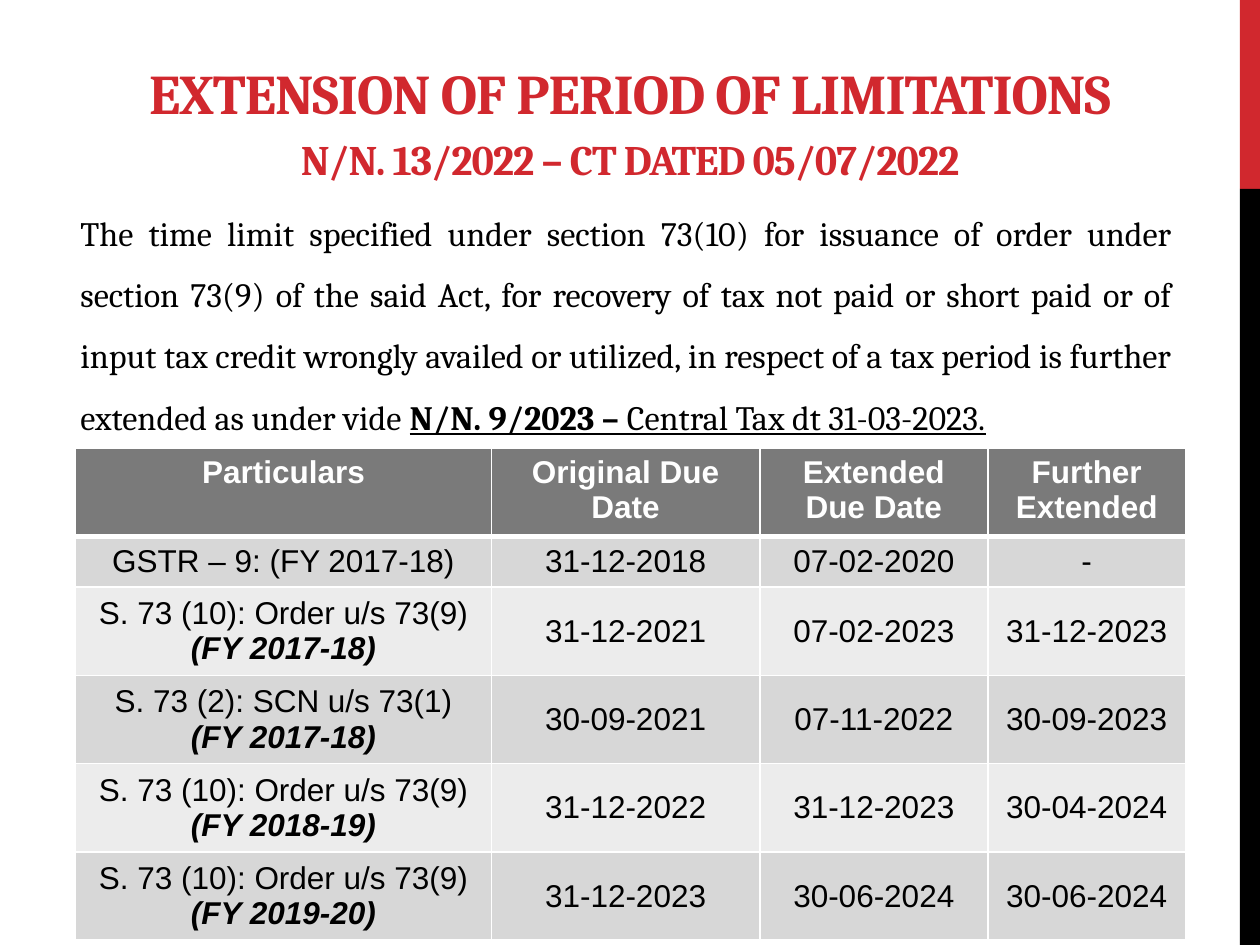
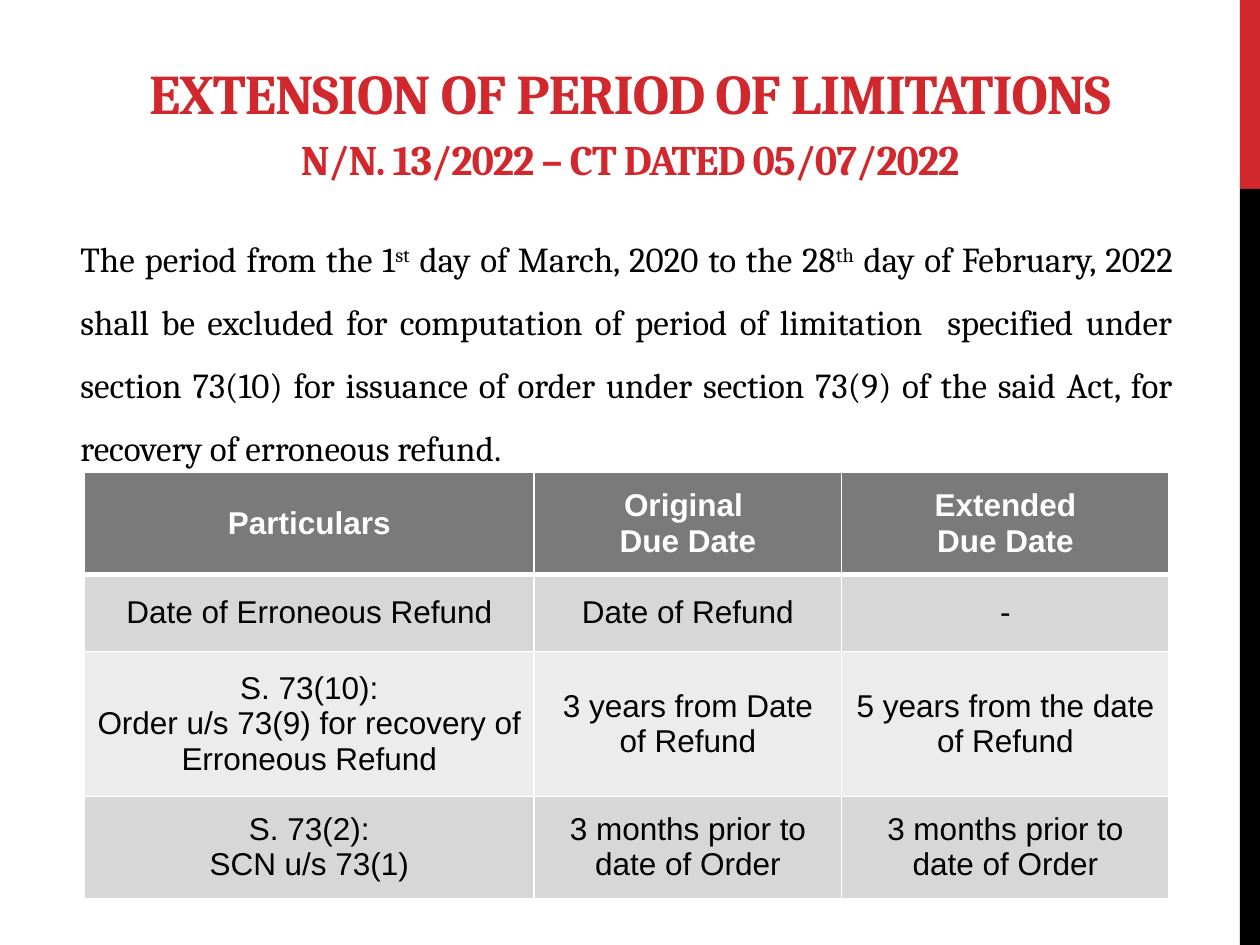
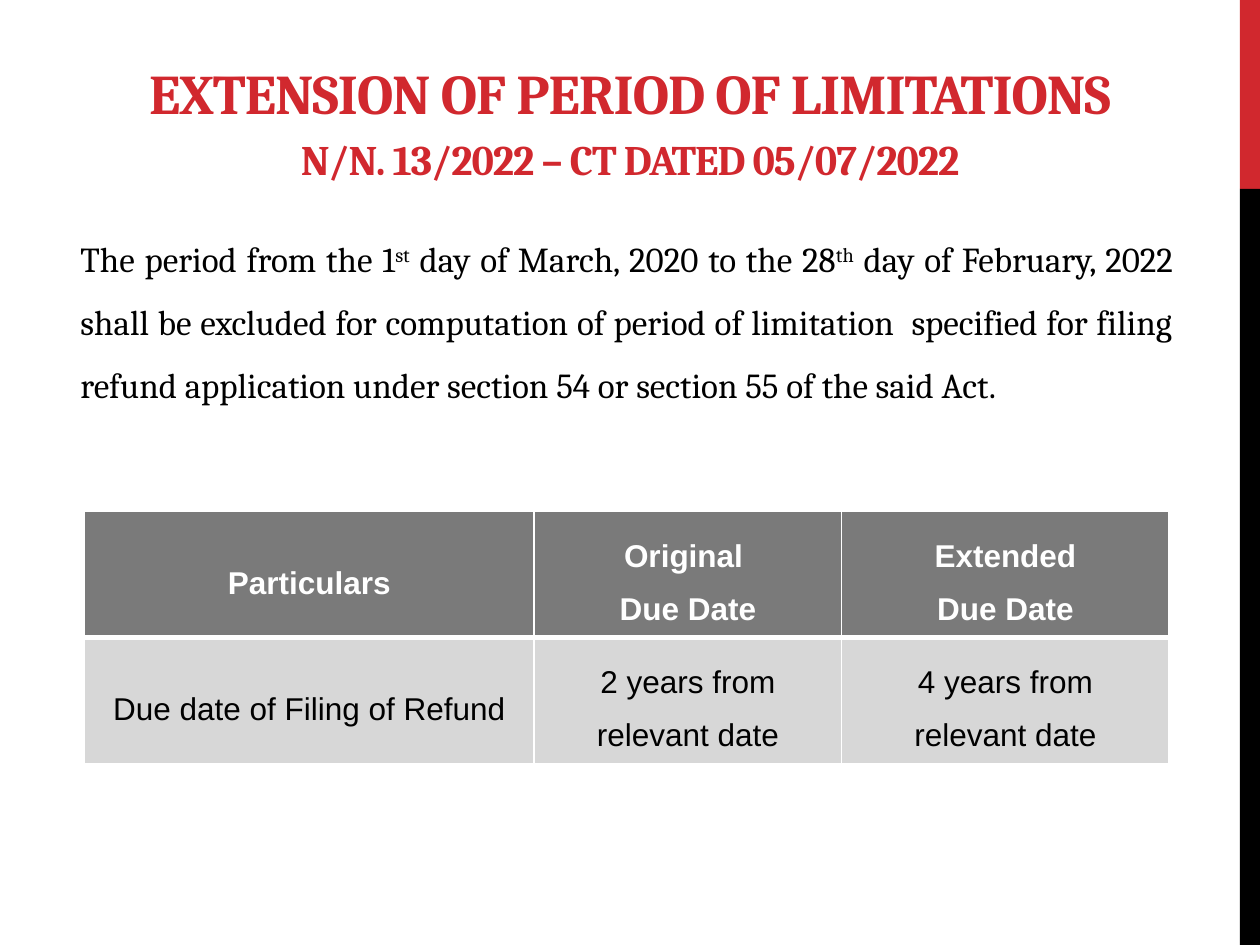
from lxml.etree import SubElement
from pptx import Presentation
from pptx.dml.color import RGBColor
from pptx.enum.shapes import MSO_SHAPE
from pptx.enum.text import MSO_ANCHOR, PP_ALIGN
from pptx.oxml import parse_xml
from pptx.oxml.ns import nsdecls, qn
from pptx.util import Inches, Pt

HUES = {
    "red": "D1282E",
    "black": "000000",
    "white": "FFFFFF",
    "head": "7A7A7A",
    "odd": "D7D7D7",
    "even": "ECECEC",
}


class Deck:
    def __init__(self):
        self.file = Presentation()
        self.file.slide_width = Inches(10)
        self.file.slide_height = Inches(7.5)
        self.slide = None

    def hue(self, name):
        return RGBColor.from_string(HUES[name])

    def style(self, run, face, size, hue, bold=False):
        font = run.font
        font.name = face
        font.size = Pt(size)
        font.bold = bold
        font.color.rgb = self.hue(hue)

    def page(self):
        self.slide = self.file.slides.add_slide(self.file.slide_layouts[6])
        self.band(0, 1.5, "red")
        self.band(1.5, 6, "black")
        self.title()

    def band(self, top, high, hue):
        bar = self.slide.shapes.add_shape(
            MSO_SHAPE.RECTANGLE, Inches(9.84), Inches(top), Inches(0.16), Inches(high))
        bar.shadow.inherit = False
        bar.fill.solid()
        bar.fill.fore_color.rgb = self.hue(hue)
        bar.line.fill.background()

    def box(self, left, top, wide, high):
        frame = self.slide.shapes.add_textbox(
            Inches(left), Inches(top), Inches(wide), Inches(high)).text_frame
        frame.word_wrap = True
        return frame

    def title(self):
        frame = self.box(0.5, 0.17, 9, 1.5)
        frame.vertical_anchor = MSO_ANCHOR.MIDDLE
        frame.text = "EXTENSION OF PERIOD OF LIMITATIONS\vN/N. 13/2022 – CT DATED 05/07/2022"
        para = frame.paragraphs[0]
        para.alignment = PP_ALIGN.CENTER
        para.line_spacing = 1.15
        for run, size in zip(para.runs, (32, 24)):
            self.style(run, "Cambria", size, "red", True)
            run.font._element.set("spc", "-60")

    def body(self, top, size, parts):
        para = self.box(0.54, top, 8.87, 6.98 - top).paragraphs[0]
        para.alignment = PP_ALIGN.JUSTIFY
        para.line_spacing = 1.5
        para.space_before = Pt(size * 0.2)
        para.space_after = Pt(6)
        for text, marks in parts:
            run = para.add_run()
            run.text = text
            self.style(run, "Cambria", size, "black", "bold" in marks)
            if "line" in marks:
                run.font.underline = True
            if "super" in marks:
                run.font._element.set("baseline", "30000")

    def edge(self, cell, row):
        props = cell._tc.get_or_add_tcPr()
        sizes = {"L": 1, "R": 1, "T": 3 if row == 1 else 1, "B": 1 if row else 3}
        for spot, (side, size) in enumerate(sizes.items()):
            line = parse_xml(f'<a:ln{side} {nsdecls("a")} w="{Pt(size)}"/>')
            fill = SubElement(line, qn("a:solidFill"))
            SubElement(fill, qn("a:srgbClr"), val=HUES["white"])
            props.insert(spot, line)

    def cell(self, cell, row, text, space):
        cell.text_frame.text = text
        cell.vertical_anchor = MSO_ANCHOR.MIDDLE
        cell.fill.solid()
        cell.fill.fore_color.rgb = self.hue(
            "head" if row == 0 else "odd" if row % 2 else "even")
        self.edge(cell, row)
        for para in cell.text_frame.paragraphs:
            para.alignment = PP_ALIGN.CENTER
            if space:
                para.line_spacing = space
            year = para.text.startswith("(FY")
            for run in para.runs:
                self.style(run, "Arial", 18, "black" if row else "white", year or row == 0)
                run.font.italic = year

    def table(self, left, top, wides, highs, rows, space=None):
        grid = self.slide.shapes.add_table(
            len(rows), len(wides), Inches(left), Inches(top),
            Inches(sum(wides)), Inches(sum(highs))).table
        grid.horz_banding = False
        for col, wide in zip(grid.columns, wides):
            col.width = Inches(wide)
        for line, high in zip(grid.rows, highs):
            line.height = Inches(high)
        for row, texts in enumerate(rows):
            for col, text in enumerate(texts):
                self.cell(grid.cell(row, col), row, text, space)
        return grid


def period(rest):
    return [
        ("The period from the 1", ""),
        ("st", "super"),
        (" day of March, 2020 to the 28", ""),
        ("th", "super"),
        (" day of February, 2022 shall be excluded for computation of period of "
         "limitation  specified " + rest, ""),
    ]


def main():
    deck = Deck()
    wides = [3.57, 2.44, 2.6]
    heads = ["Particulars", "Original \nDue Date", "Extended\nDue Date"]

    deck.page()
    deck.body(1.47, 19.5, [
        ("The time limit specified under section 73(10) for issuance of order under "
         "section 73(9) of the said Act, for recovery of tax not paid or short paid or of "
         "input tax credit wrongly availed or utilized, in respect of a tax period is "
         "further extended as under vide ", ""),
        ("N/N. 9/2023 – ", "bold line"),
        ("Central Tax dt 31-03-2023.", "line"),
    ])
    order = "S. 73 (10): Order u/s 73(9)\n"
    grid = deck.table(0.6, 3.56, [3.3, 2.13, 1.81, 1.57], [0.66, 0.4] + [0.66] * 4, [
        ["Particulars", "Original Due Date", "Extended Due Date", "Further Extended"],
        ["GSTR – 9: (FY 2017-18)", "31-12-2018", "07-02-2020", "-"],
        [order + "(FY 2017-18)", "31-12-2021", "07-02-2023", "31-12-2023"],
        ["S. 73 (2): SCN u/s 73(1)\n(FY 2017-18)", "30-09-2021", "07-11-2022", "30-09-2023"],
        [order + "(FY 2018-19)", "31-12-2022", "31-12-2023", "30-04-2024"],
        [order + "(FY 2019-20)", "31-12-2023", "30-06-2024", "30-06-2024"],
    ])
    for cell in grid.rows[0].cells:
        cell.vertical_anchor = MSO_ANCHOR.TOP

    deck.page()
    deck.body(1.67, 20, period(
        "under section 73(10) for issuance of order under section 73(9) of the said Act, "
        "for recovery of erroneous refund."))
    prior = "3 months prior to date of Order"
    deck.table(0.67, 3.75, wides, [0.81, 0.61, 1.15, 0.81], [
        heads,
        ["Date of Erroneous Refund", "Date of Refund", "-"],
        ["S. 73(10):\nOrder u/s 73(9) for recovery of Erroneous Refund",
         "3 years from Date of Refund", "5 years from the date of Refund"],
        ["S. 73(2):\vSCN u/s 73(1)", prior, prior],
    ])

    deck.page()
    deck.body(1.67, 20, period(
        "for filing refund application under section 54 or section 55 of the said Act."))
    deck.table(0.67, 4.06, wides, [0.93, 0.94], [
        heads,
        ["Due date of Filing of Refund", "2 years from relevant date",
         "4 years from\nrelevant date"],
    ], 1.5)
    deck.file.save("out.pptx")


if __name__ == "__main__":
    main()
